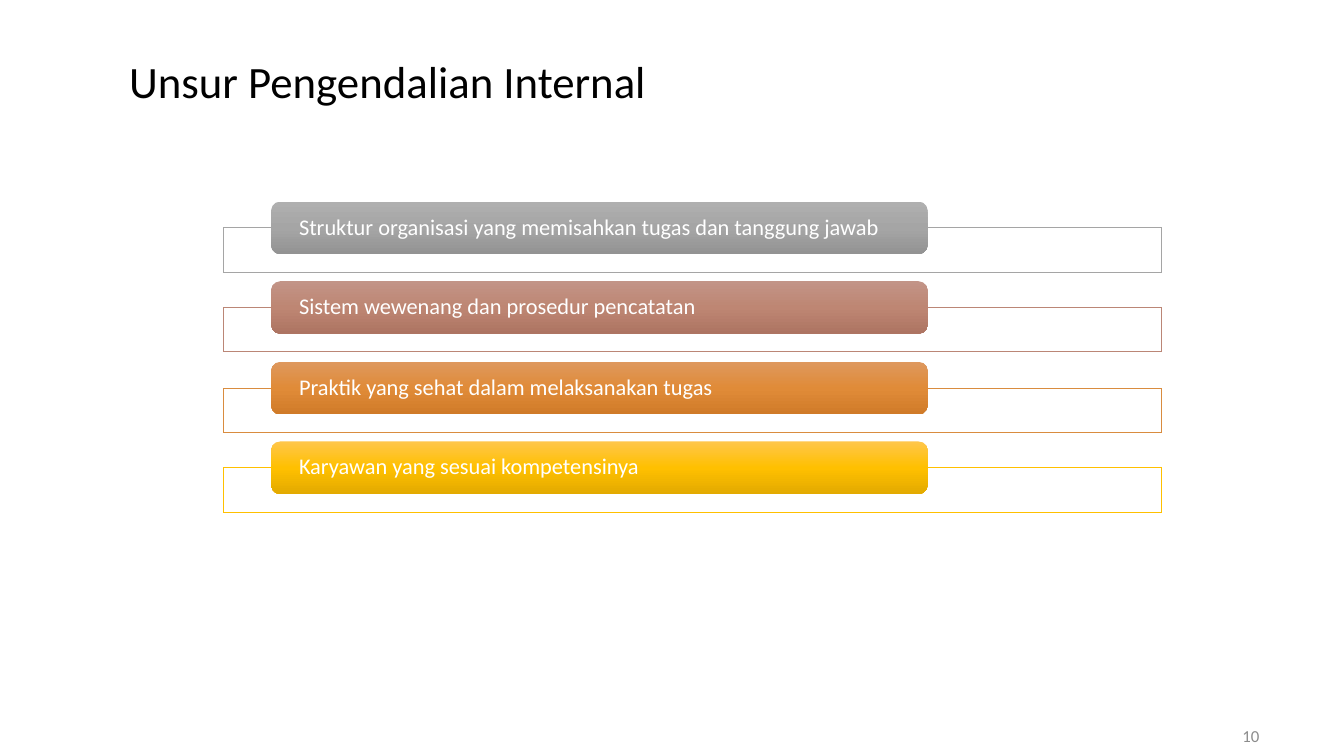
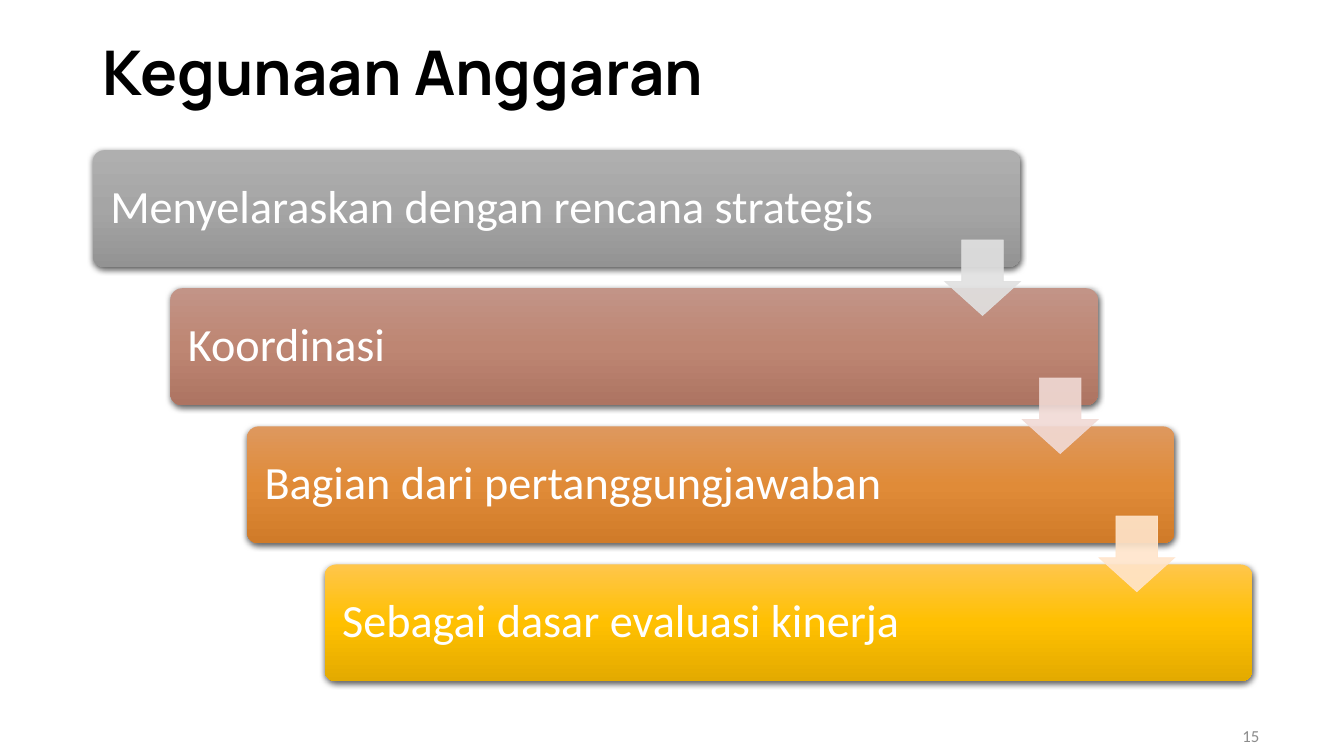
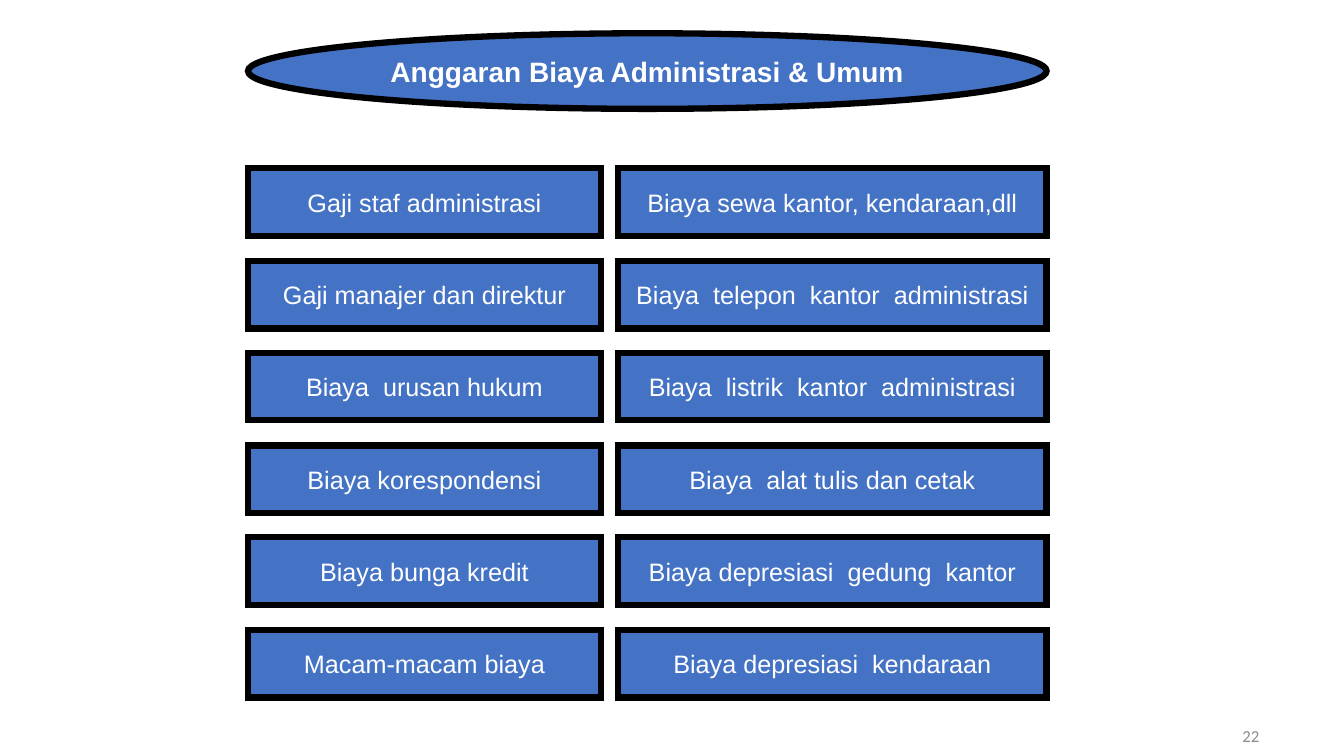
from copy import deepcopy
from dataclasses import dataclass
from typing import Any

from pptx import Presentation
from pptx.dml.color import RGBColor
from pptx.enum.shapes import MSO_SHAPE
from pptx.enum.text import MSO_ANCHOR, MSO_AUTO_SIZE, PP_ALIGN
from pptx.oxml.ns import qn
from pptx.oxml.xmlchemy import OxmlElement
from pptx.util import Emu, Pt

PX = 9144  # 100 px to the inch
TITLE_ONLY, BLANK = 5, 6
BLACK, WHITE, BLUE, GREY = "000000", "FFFFFF", "4472C4", "8C8C8C"
LEFT, CENTER, RIGHT = PP_ALIGN.LEFT, PP_ALIGN.CENTER, PP_ALIGN.RIGHT

NUMBER_FONT = {"name": "Calibri", "size": Pt(12)}
PLAIN_TITLE = {"name": "Calibri", "size": Pt(32), "bold": False}
BOLD_TITLE = {"name": "Manrope", "size": Pt(44), "bold": True}
ELEMENT_FONT = {"name": "Calibri", "size": Pt(16)}
STEP_FONT = {"name": "Calibri", "size": Pt(33)}
COST_FONT = {"name": "Arial", "size": Pt(18)}
HEADING_FONT = {"name": "Arial", "size": Pt(20), "bold": True}


@dataclass(frozen=True)
class Box:
    left: int
    top: int
    width: int
    height: int

    def emu(self) -> tuple[Emu, ...]:
        return tuple(Emu(n * PX) for n in (self.left, self.top, self.width, self.height))


@dataclass(frozen=True)
class Tone:
    """Gradient from top to bottom, frame colour and arrow colour."""
    stops: tuple[str, str, str]
    frame: str
    arrow: str


TONES = (
    Tone(("AFAFAF", "A5A5A5", "939393"), "A5A5A5", "E1E1E1"),
    Tone(("C29487", "BE8673", "AD7462"), "BB8676", "F1DAD5"),
    Tone(("DE985E", "E08B38", "D07B29"), "D98C3F", "FFE5CB"),
    Tone(("FFC64B", "FFC000", "E3AA00"), "FFC000", "FFF0CB"),
)

ELEMENTS = (
    "Struktur organisasi yang memisahkan tugas dan tanggung jawab",
    "Sistem wewenang dan prosedur pencatatan",
    "Praktik yang sehat dalam melaksanakan tugas",
    "Karyawan yang sesuai kompetensinya",
)
USES = (
    "Menyelaraskan dengan rencana strategis",
    "Koordinasi",
    "Bagian dari pertanggungjawaban",
    "Sebagai dasar evaluasi kinerja",
)
COSTS = (
    ("Gaji staf administrasi", "Biaya sewa kantor, kendaraan,dll"),
    ("Gaji manajer dan direktur", "Biaya  telepon  kantor  administrasi"),
    ("Biaya  urusan hukum", "Biaya  listrik  kantor  administrasi"),
    ("Biaya korespondensi", "Biaya  alat tulis dan cetak"),
    ("Biaya bunga kredit", "Biaya depresiasi  gedung  kantor"),
    ("Macam-macam biaya", "Biaya depresiasi  kendaraan"),
)


def rgb(color: str) -> RGBColor:
    return RGBColor.from_string(color)


def spread(first: int, last: int, count: int) -> list[int]:
    """Equally spaced positions from first to last."""
    return [round(first + (last - first) * i / (count - 1)) for i in range(count)]


def set_all(target: Any, values: dict[str, Any]) -> None:
    for name, value in values.items():
        setattr(target, name, value)


def write(sp: Any, text: str, font: dict[str, Any], color: str, align: PP_ALIGN,
          spacing: float = 1.0, **frame: Any) -> None:
    tf = sp.text_frame
    set_all(tf, {"word_wrap": True, "auto_size": MSO_AUTO_SIZE.NONE,
                 "vertical_anchor": MSO_ANCHOR.MIDDLE} | frame)
    p = tf.paragraphs[0]
    set_all(p, {"alignment": align, "line_spacing": spacing})
    r = p.add_run()
    r.text = text
    set_all(r.font, font)
    r.font.color.rgb = rgb(color)


def add_shape(s: Any, kind: MSO_SHAPE, box: Box, fill: str | None = None,
              line: str | None = None, weight: float = 0.5,
              adjust: tuple[float, ...] = ()) -> Any:
    sp = s.shapes.add_shape(kind, *box.emu())
    sp.shadow.inherit = False
    for i, value in enumerate(adjust):
        sp.adjustments[i] = value
    if fill:
        sp.fill.solid()
        sp.fill.fore_color.rgb = rgb(fill)
    if line:
        sp.line.color.rgb = rgb(line)
        sp.line.width = Pt(weight)
        sp.line._get_or_add_ln().append(OxmlElement("a:miter"))
    else:
        sp.line.fill.background()
    return sp


def set_alpha(parent: Any, percent: int) -> None:
    """Make every colour below the element partly transparent."""
    for clr in list(parent.iter(qn("a:srgbClr"))):
        alpha = OxmlElement("a:alpha")
        alpha.set("val", str(percent * 1000))
        clr.append(alpha)


def add_bar(s: Any, box: Box, tone: Tone, corner: float) -> Any:
    sp = add_shape(s, MSO_SHAPE.ROUNDED_RECTANGLE, box, adjust=(corner,))
    sp.fill.gradient()
    sp.fill.gradient_angle = 270
    stop_list = next(sp.element.spPr.iter(qn("a:gsLst")))
    stop_list.insert(1, deepcopy(stop_list[0]))
    for stop, position, color in zip(sp.fill.gradient_stops, (0, 0.5, 1), tone.stops):
        stop.position = position
        stop.color.rgb = rgb(color)
    return sp


def add_drop_shadow(sp: Any) -> None:
    shadow = OxmlElement("a:outerShdw")
    for name, value in {"blurRad": Pt(4.5), "dist": Pt(1.5), "dir": 90 * 60000,
                        "algn": "ctr", "rotWithShape": 0}.items():
        shadow.set(name, str(value))
    clr = OxmlElement("a:srgbClr")
    clr.set("val", BLACK)
    shadow.append(clr)
    set_alpha(shadow, 63)
    sp.element.spPr.find(qn("a:effectLst")).append(shadow)


def add_slide(prs: Any, layout: int, number: int) -> Any:
    s = prs.slides.add_slide(prs.slide_layouts[layout])
    tb = s.shapes.add_textbox(*Box(959, 717, 300, 26).emu())
    write(tb, str(number), NUMBER_FONT, GREY, RIGHT)
    return s


def set_title(s: Any, box: Box, text: str, font: dict[str, Any], **layout: Any) -> None:
    title = s.shapes.title
    set_all(title, dict(zip(("left", "top", "width", "height"), box.emu())))
    write(title, text, font, BLACK, LEFT, **layout)


def build_elements(prs: Any) -> None:
    s = add_slide(prs, TITLE_ONLY, 10)
    set_title(s, Box(118, 48, 1052, 64), "Unsur Pengendalian Internal", PLAIN_TITLE,
              vertical_anchor=MSO_ANCHOR.TOP)
    inset = Emu(25 * PX)
    for top, text, tone in zip(spread(200, 438, len(ELEMENTS)), ELEMENTS, TONES):
        add_shape(s, MSO_SHAPE.RECTANGLE, Box(222, top + 26, 930, 44), WHITE, tone.frame)
        bar = add_bar(s, Box(269, top, 651, 52), tone, 0.17)
        write(bar, text, ELEMENT_FONT, WHITE, LEFT, 0.9, margin_left=inset,
              margin_right=inset, margin_top=0, margin_bottom=0)


def build_uses(prs: Any) -> None:
    s = add_slide(prs, TITLE_ONLY, 15)
    set_title(s, Box(92, 30, 1147, 90), "Kegunaan Anggaran", BOLD_TITLE, spacing=0.9)
    width, arrow_size, inset = 920, 75, Emu(14 * PX)
    margins = {f"margin_{side}": inset for side in ("left", "right", "top", "bottom")}
    steps = list(zip(spread(92, 322, len(USES)), spread(149, 560, len(USES)), USES, TONES))
    for left, top, text, tone in steps:
        bar = add_bar(s, Box(left, top, width, 116), tone, 0.1)
        add_drop_shadow(bar)
        write(bar, text, STEP_FONT, WHITE, LEFT, 0.9, **margins)
    for left, top, _, tone in steps[:-1]:
        box = Box(left + width - arrow_size, top + 89, arrow_size, arrow_size)
        arrow = add_shape(s, MSO_SHAPE.DOWN_ARROW, box, tone.arrow, tone.arrow,
                          adjust=(0.55, 0.45))
        set_alpha(arrow.element.spPr, 90)


def build_costs(prs: Any) -> None:
    s = add_slide(prs, BLANK, 22)
    heading = add_shape(s, MSO_SHAPE.OVAL, Box(246, 33, 792, 75), BLUE, BLACK, 4.5)
    write(heading, "Anggaran Biaya Administrasi & Umum", HEADING_FONT, WHITE, CENTER,
          word_wrap=False)
    columns = ((246, 350), (613, 425))
    for top, row in zip(spread(167, 625, len(COSTS)), COSTS):
        for (left, width), text in zip(columns, row):
            cell = add_shape(s, MSO_SHAPE.RECTANGLE, Box(left, top, width, 67),
                             BLUE, BLACK, 4.5)
            write(cell, text, COST_FONT, WHITE, CENTER, word_wrap=False)


def main() -> None:
    prs = Presentation()
    prs.slide_width, prs.slide_height = Emu(1333 * PX), Emu(750 * PX)
    for build in (build_elements, build_uses, build_costs):
        build(prs)
    prs.save("out.pptx")


if __name__ == "__main__":
    main()
